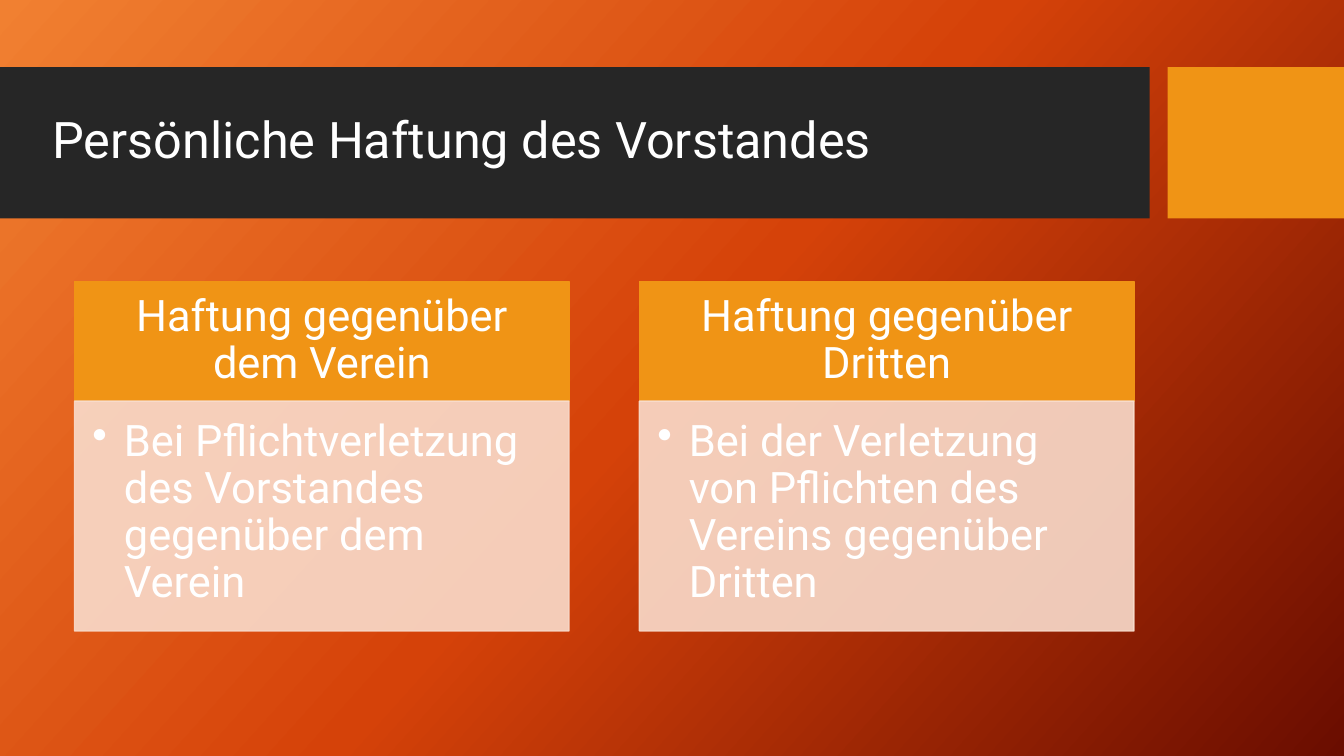
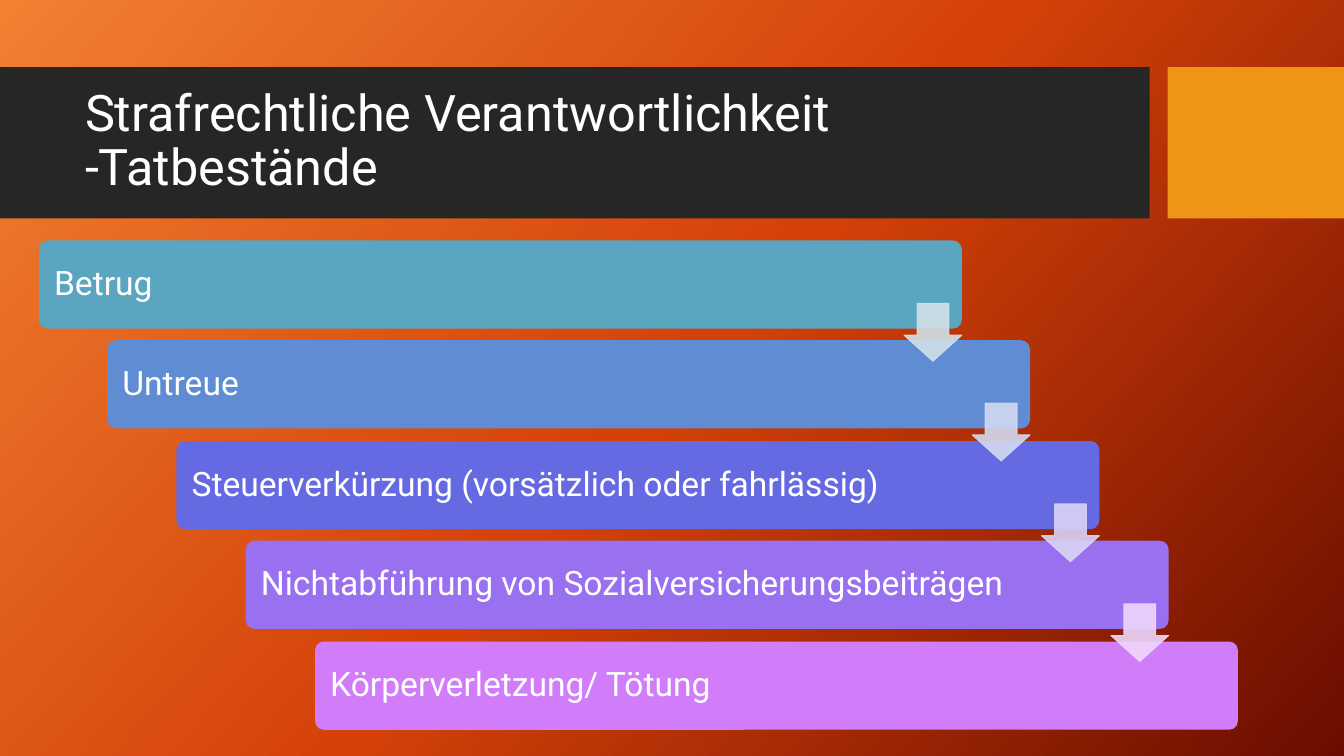
from dataclasses import dataclass
from typing import Optional

from pptx import Presentation
from pptx.dml.color import RGBColor
from pptx.enum.shapes import MSO_SHAPE
from pptx.enum.text import MSO_ANCHOR, PP_ALIGN
from pptx.oxml import parse_xml
from pptx.oxml.ns import nsdecls
from pptx.util import Emu, Pt

EMU_PER_PX = 9525
SLIDE_WIDTH, SLIDE_HEIGHT = 1280, 720

# Shared look
FONT = "Roboto"
WHITE, DARK, ORANGE, PEACH = "FFFFFF", "262626", "F09415", "F9DCCC"
GRADIENT = ((0, "F18031"), (50, "D54209"), (100, "6A0D00"))
GRADIENT_ANGLE = 42
TRANSLUCENT = 90
BAND_TOP, BAND_HEIGHT = 64, 144


@dataclass(frozen=True)
class Box:
    left: int
    top: int
    width: int
    height: int


@dataclass(frozen=True)
class Style:
    size: int
    insets: tuple[int, int, int, int]
    align: PP_ALIGN = PP_ALIGN.LEFT
    anchor: MSO_ANCHOR = MSO_ANCHOR.MIDDLE
    bullet_indent: int = 0


@dataclass(frozen=True)
class Column:
    heading: str
    body: str


@dataclass(frozen=True)
class Step:
    text: str
    fill: str
    arrow_fill: Optional[str] = None


TITLE = Style(36, (10, 5, 10, 5))
HEADING = Style(31, (23, 13, 23, 13), PP_ALIGN.CENTER)
BODY = Style(31, (17, 17, 23, 26), anchor=MSO_ANCHOR.TOP, bullet_indent=30)
STEP = Style(24, (12, 10, 105, 10))

COLUMNS = (
    Column("Haftung gegenüber dem Verein",
           "Bei Pflichtverletzung des Vorstandes gegenüber dem Verein"),
    Column("Haftung gegenüber Dritten",
           "Bei der Verletzung von Pflichten des Vereins gegenüber Dritten"),
)
STEPS = (
    Step("Betrug", "5AA6C0", "D2E1E8"),
    Step("Untreue", "5F8CD2", "D2D9F1"),
    Step("Steuerverkürzung (vorsätzlich oder fahrlässig)", "666AE2", "DAD4F7"),
    Step("Nichtabführung von Sozialversicherungsbeiträgen", "9970EF", "EED7FD"),
    Step("Körperverletzung/ Tötung", "D17DF9"),
)


def px(length: int) -> Emu:
    return Emu(length * EMU_PER_PX)


def color(value: str) -> RGBColor:
    return RGBColor.from_string(value)


def place(box: Box) -> tuple[Emu, Emu, Emu, Emu]:
    return px(box.left), px(box.top), px(box.width), px(box.height)


def add_block(slide, box: Box, fill: str, kind=MSO_SHAPE.RECTANGLE,
              line_width: float = 0, alpha: int = 100, adjustments=()):
    shape = slide.shapes.add_shape(kind, *place(box))
    shape.shadow.inherit = False
    for index, value in enumerate(adjustments):
        shape.adjustments[index] = value
    shape.fill.solid()
    shape.fill.fore_color.rgb = color(fill)
    if line_width:
        shape.line.width = Pt(line_width)
        shape.line.color.rgb = color(fill)
    else:
        shape.line.fill.background()
    if alpha < 100:
        for element in shape.element.spPr.iter("{*}srgbClr"):
            element.append(parse_xml(f'<a:alpha {nsdecls("a")} val="{alpha * 1000}"/>'))
    return shape


def write(shape, text: str, style: Style) -> None:
    frame = shape.text_frame
    frame.word_wrap = True
    frame.vertical_anchor = style.anchor
    (frame.margin_left, frame.margin_top,
     frame.margin_right, frame.margin_bottom) = map(px, style.insets)
    paragraph = frame.paragraphs[0]
    if style.bullet_indent:
        properties = paragraph._p.get_or_add_pPr()
        properties.set("marL", str(px(style.bullet_indent)))
        properties.set("indent", str(px(-style.bullet_indent)))
        properties.append(parse_xml(f'<a:buChar {nsdecls("a")} char="•"/>'))
    paragraph.alignment = style.align
    paragraph.line_spacing = 0.9
    run = paragraph.add_run()
    run.text = text
    run.font.name = FONT
    run.font.size = Pt(style.size)
    run.font.color.rgb = color(WHITE)


def set_background(slide) -> None:
    stops = "".join(
        f'<a:gs pos="{position * 1000}"><a:srgbClr val="{value}"/></a:gs>'
        for position, value in GRADIENT)
    slide.element.cSld.insert(0, parse_xml(
        f'<p:bg {nsdecls("p", "a")}><p:bgPr><a:gradFill rotWithShape="1">'
        f'<a:gsLst>{stops}</a:gsLst><a:lin ang="{GRADIENT_ANGLE * 60000}" scaled="0"/>'
        '</a:gradFill><a:effectLst/></p:bgPr></p:bg>'))


def add_titled_slide(presentation, title: str, left: int, width: int):
    slide = presentation.slides.add_slide(presentation.slide_layouts[6])
    set_background(slide)
    # Title band and accent block
    add_block(slide, Box(0, BAND_TOP, 1095, BAND_HEIGHT), DARK)
    add_block(slide, Box(1112, BAND_TOP, 168, BAND_HEIGHT), ORANGE)
    title_box = slide.shapes.add_textbox(*place(Box(left, 79, width, 113)))
    write(title_box, title, TITLE)
    return slide


def add_columns(slide) -> None:
    left, top, width, pitch = 71, 268, 471, 538
    heading_height, body_height = 114, 219
    for index, column in enumerate(COLUMNS):
        x = left + index * pitch
        heading = add_block(slide, Box(x, top, width, heading_height), ORANGE,
                            line_width=1)
        write(heading, column.heading, HEADING)
        body = add_block(slide, Box(x, top + heading_height, width, body_height),
                         PEACH, line_width=1, alpha=TRANSLUCENT)
        write(body, column.body, BODY)


def add_staircase(slide) -> None:
    first_left, last_left = 37, 300
    first_top, last_top = 229, 611
    width, height, arrow_size, arrow_drop = 879, 84, 55, 60
    last = len(STEPS) - 1
    boxes = [Box(first_left + (last_left - first_left) * index // last,
                 first_top + (last_top - first_top) * index // last, width, height)
             for index in range(len(STEPS))]
    for step, box in zip(STEPS, boxes):
        bar = add_block(slide, box, step.fill, MSO_SHAPE.ROUNDED_RECTANGLE,
                        adjustments=(0.1,))
        write(bar, step.text, STEP)
    # Arrows lie above all bars, flush with each bar's right edge
    for step, box in zip(STEPS, boxes):
        if step.arrow_fill:
            arrow = Box(box.left + width - arrow_size, box.top + arrow_drop,
                        arrow_size, arrow_size)
            add_block(slide, arrow, step.arrow_fill, MSO_SHAPE.DOWN_ARROW,
                      line_width=0.75, alpha=TRANSLUCENT, adjustments=(0.55, 0.45))


def main() -> None:
    presentation = Presentation()
    presentation.slide_width = px(SLIDE_WIDTH)
    presentation.slide_height = px(SLIDE_HEIGHT)
    add_columns(add_titled_slide(
        presentation, "Persönliche Haftung des Vorstandes", 40, 1041))
    add_staircase(add_titled_slide(
        presentation, "Strafrechtliche Verantwortlichkeit -Tatbestände", 71, 1009))
    presentation.save("out.pptx")


if __name__ == "__main__":
    main()
